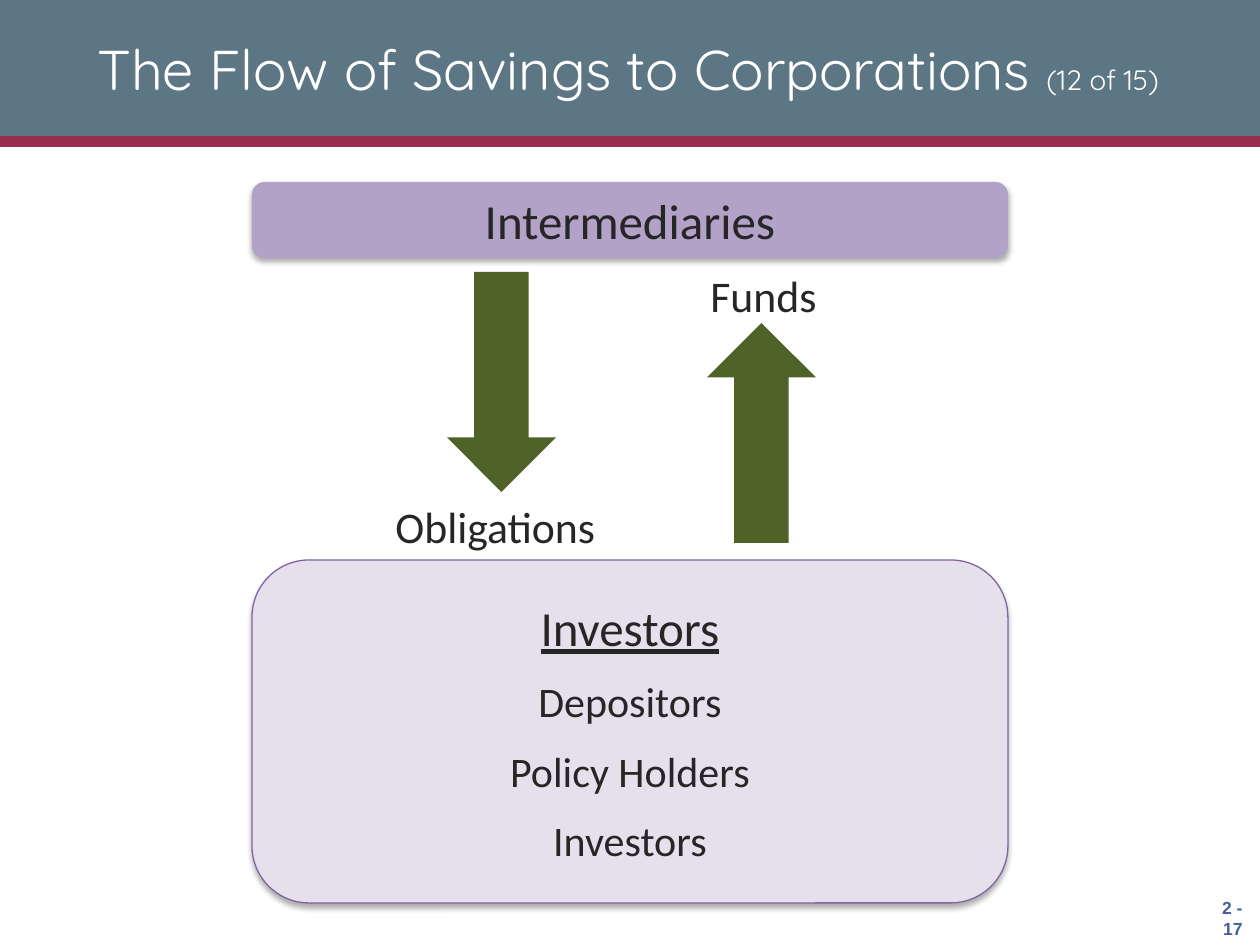
import pptx
import pptx.util
import pptx.dml.color
import pptx.enum.shapes
import pptx.enum.text
import pptx.oxml
import pptx.oxml.ns

SCALE = 914400 / 126
KIND = pptx.enum.shapes.MSO_SHAPE
ALIGN = pptx.enum.text.PP_ALIGN
MIDDLE = pptx.enum.text.MSO_ANCHOR.MIDDLE
COLORS = {
    "slate": "5C7683", "wine": "992D4F", "white": "FFFFFF",
    "purple": "B3A2C7", "pale": "E6E0EC", "edge": "8064A2",
    "ink": "262626", "green": "4F6228", "blue": "455EA0",
}
SHADOW = (
    '<a:effectLst %s><a:outerShdw blurRad="44450" dist="27940" dir="5400000" '
    'algn="ctr" rotWithShape="0"><a:srgbClr val="000000"><a:alpha val="32000"/>'
    '</a:srgbClr></a:outerShdw></a:effectLst>' % pptx.oxml.ns.nsdecls("a")
)


def color(name):
    return pptx.dml.color.RGBColor.from_string(COLORS[name])


def place(box):
    return [round(v * SCALE) for v in box]


def style(para, size, hue="ink", face="Calibri", align=ALIGN.CENTER):
    para.alignment = align
    font = para.font
    font.name = face
    font.color.rgb = color(hue)
    if size:
        font.size = pptx.util.Pt(size)
    return font


def add_block(slide, kind, box, fill, line=None):
    shape = slide.shapes.add_shape(kind, *place(box))
    shape.shadow.inherit = False
    shape.fill.solid()
    shape.fill.fore_color.rgb = color(fill)
    if line:
        shape.line.color.rgb = color(line)
        shape.line.width = pptx.util.Pt(0.75)
    else:
        shape.line.fill.background()
    return shape


def add_panel(slide, box, fill, head, items=(), line=None):
    shape = add_block(slide, KIND.ROUNDED_RECTANGLE, box, fill, line)
    props = shape._element.spPr
    props.remove(props.find(pptx.oxml.ns.qn("a:effectLst")))
    props.append(pptx.oxml.parse_xml(SHADOW))
    frame = shape.text_frame
    frame.vertical_anchor = MIDDLE
    para = frame.paragraphs[0]
    para.text = head
    style(para, 28).underline = bool(items)
    for item in items:
        para = frame.add_paragraph()
        para.text = item
        style(para, 24)
        para.space_before = pptx.util.Pt(11)


def add_label(slide, box, text, size, wrap=False, **look):
    frame = slide.shapes.add_textbox(*place(box)).text_frame
    frame.word_wrap = wrap
    frame.vertical_anchor = MIDDLE
    para = frame.paragraphs[0]
    para.text = text
    style(para, size, **look)


def add_title(slide, box, parts):
    frame = slide.shapes.add_textbox(*place(box)).text_frame
    frame.word_wrap = True
    frame.vertical_anchor = MIDDLE
    para = frame.paragraphs[0]
    style(para, None, "white", "Quicksand")
    for text, size in parts:
        run = para.add_run()
        run.text = text
        run.font.size = pptx.util.Pt(size)


def main():
    deck = pptx.Presentation()
    deck.slide_width, deck.slide_height = place((1260, 945))
    slide = deck.slides.add_slide(deck.slide_layouts[6])
    add_block(slide, KIND.RECTANGLE, (0, 136, 1260, 11), "wine")
    add_block(slide, KIND.RECTANGLE, (0, 0, 1260, 136), "slate")
    add_title(slide, (32, 10, 1192, 116),
              [("The Flow of Savings to Corporations ", 32), ("(12 of 15)", 16)])
    add_panel(slide, (252, 182, 756, 76), "purple", "Intermediaries")
    add_panel(slide, (252, 560, 756, 343), "pale", "Investors",
              ("Depositors", "Policy Holders", "Investors"), "edge")
    add_label(slide, (383, 492, 236, 68), "Obligations", 25, align=ALIGN.LEFT)
    add_label(slide, (698, 261, 137, 68), "Funds", 25, align=ALIGN.LEFT)
    add_block(slide, KIND.UP_ARROW, (707, 323, 109, 220), "green")
    add_block(slide, KIND.DOWN_ARROW, (447, 272, 109, 220), "green")
    add_label(slide, (1192, 892, 63, 53), "2 - 17", 10,
              hue="blue", face="Arial", align=ALIGN.RIGHT)
    number = slide.shapes[-1].text_frame.paragraphs[0]
    number.font.bold = True
    deck.save("out.pptx")


if __name__ == "__main__":
    main()
